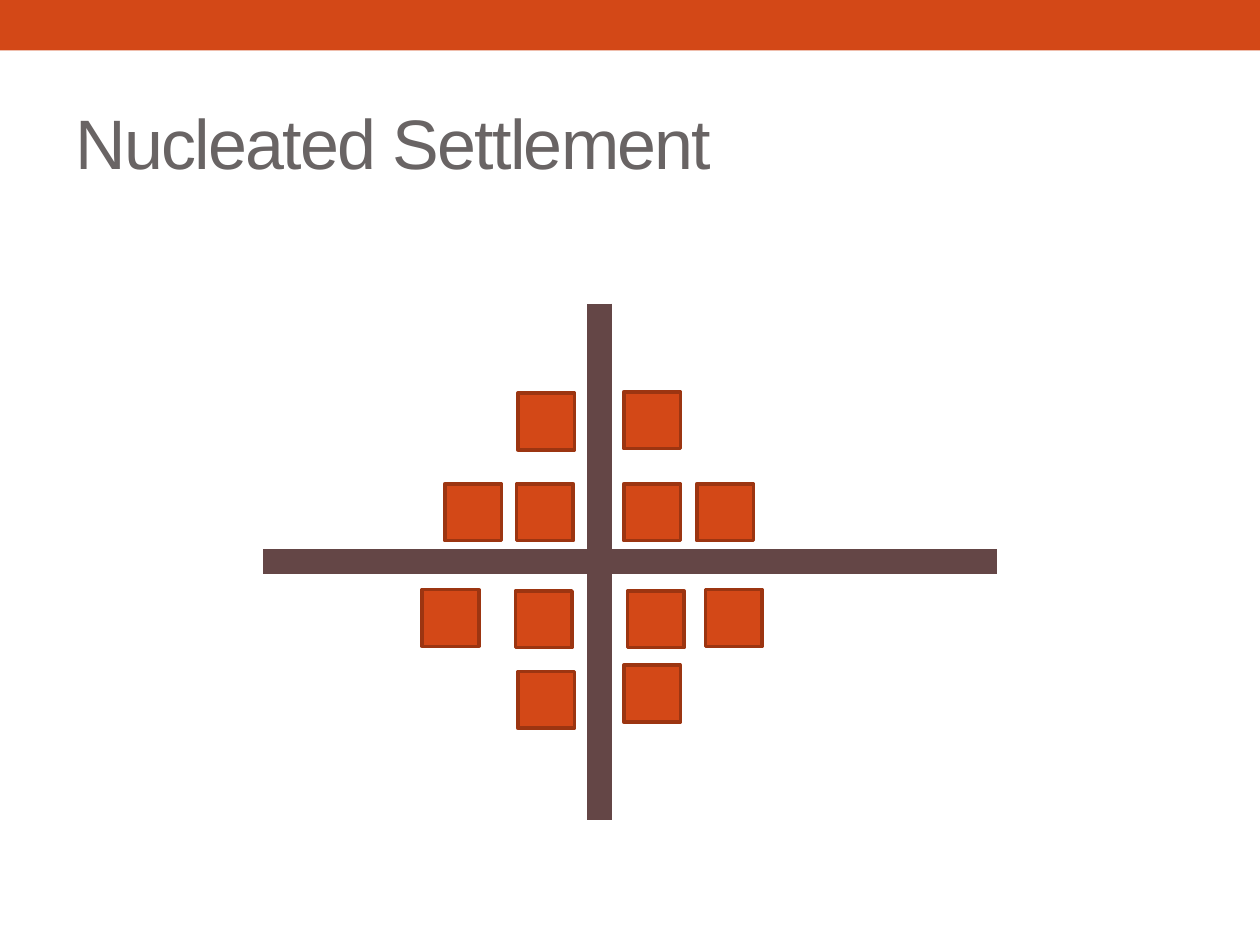
from pptx import Presentation
from pptx.dml.color import RGBColor
from pptx.enum.shapes import MSO_CONNECTOR, MSO_SHAPE
from pptx.enum.text import MSO_ANCHOR, PP_ALIGN
from pptx.oxml.ns import qn
from pptx.util import Inches, Pt
from lxml import etree

RECT = MSO_SHAPE.RECTANGLE
LINE = MSO_CONNECTOR.STRAIGHT
MIDDLE = MSO_ANCHOR.MIDDLE
LEFT = PP_ALIGN.LEFT

# Content, in inches
TITLE = "Nucleated Settlement"
ROADS = [(2.09, 4.46, 7.91, 4.46), (4.76, 2.41, 4.76, 6.51)]
HOUSE = 0.45
ROWS = [  # top and left of each house, row by row
    [(4.11, 3.12), (4.95, 3.11)],
    [(3.53, 3.84), (4.1, 3.84), (4.95, 3.84), (5.53, 3.84)],
    [(3.35, 4.68), (4.09, 4.69), (4.98, 4.69), (5.6, 4.68)],
    [(4.11, 5.33), (4.95, 5.28)],
]

THEME = {
    "font": "Arial",
    "title": Pt(40),
    "track": "-100",
    "text": RGBColor.from_string("696464"),
    "fill": RGBColor.from_string("D34817"),
    "edge": RGBColor.from_string("9C3511"),
    "road": RGBColor.from_string("644646"),
    "edge_w": Pt(2.08),
    "road_w": Pt(14.25),
}


def add_box(slide, x, y, w, h, edge=False):
    box = slide.shapes.add_shape(RECT, *map(Inches, (x, y, w, h)))
    box.shadow.inherit = False
    box.fill.solid()
    box.fill.fore_color.rgb = THEME["fill"]
    if edge:
        box.line.color.rgb = THEME["edge"]
        box.line.width = THEME["edge_w"]
    else:
        box.line.fill.background()


def add_road(slide, ends):
    road = slide.shapes.add_connector(LINE, *map(Inches, ends))
    road.line.color.rgb = THEME["road"]
    road.line.width = THEME["road_w"]
    etree.SubElement(road._element.spPr, qn("a:effectLst"))


def set_title(slide):
    title = slide.shapes.title
    title.left, title.top = Inches(0.5), Inches(0.58)
    title.width, title.height = Inches(9), Inches(1.08)
    frame = title.text_frame
    frame.word_wrap = True
    frame.vertical_anchor = MIDDLE
    para = frame.paragraphs[0]
    para.alignment = LEFT
    run = para.add_run()
    run.text = TITLE
    run.font.name = THEME["font"]
    run.font.size = THEME["title"]
    run.font.color.rgb = THEME["text"]
    run.font._element.set("spc", THEME["track"])


def main():
    deck = Presentation()
    deck.slide_width, deck.slide_height = Inches(10), Inches(7.5)
    slide = deck.slides.add_slide(deck.slide_layouts[5])

    # Top band and title
    add_box(slide, 0, 0, 10, 0.4)
    set_title(slide)

    # Crossroads
    for ends in ROADS:
        add_road(slide, ends)

    # Houses around the crossing
    for row in ROWS:
        for x, y in row:
            add_box(slide, x, y, HOUSE, HOUSE, edge=True)

    deck.save("out.pptx")


if __name__ == "__main__":
    main()
